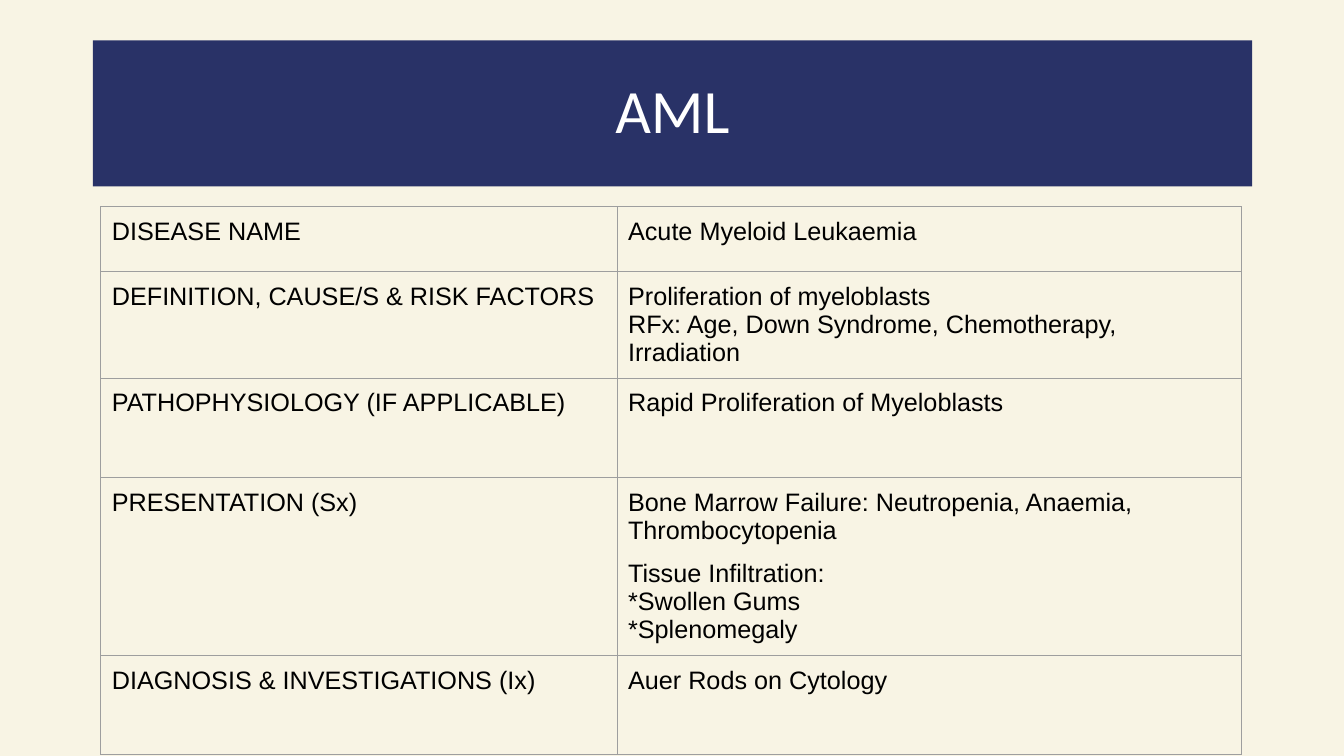
import pptx
import pptx.util
import pptx.dml.color
import pptx.enum.text
import pptx.oxml
import pptx.oxml.ns
from pptx.util import Inches

COLOURS = {"page": "F8F4E4", "banner": "293267", "heading": "FFFFFF",
           "body": "000000", "border": "9E9E9E"}

DISEASE_FACTS = [
    (0.64, "DISEASE NAME", ["Acute Myeloid Leukaemia"]),
    (0.99, "DEFINITION, CAUSE/S & RISK FACTORS",
     ["Proliferation of myeloblasts",
      "RFx: Age, Down Syndrome, Chemotherapy, Irradiation"]),
    (0.99, "PATHOPHYSIOLOGY (IF APPLICABLE)",
     ["Rapid Proliferation of Myeloblasts"]),
    (1.66, "PRESENTATION (Sx)",
     ["Bone Marrow Failure: Neutropenia, Anaemia, Thrombocytopenia",
      "Tissue Infiltration:", "*Swollen Gums", "*Splenomegaly"]),
    (0.99, "DIAGNOSIS & INVESTIGATIONS (Ix)", ["Auer Rods on Cytology"]),
]
LINE_SPACING = {"Tissue Infiltration:": 1.5}


class DiseaseSlide:
    heading_font = "Calibri"
    body_font = "Arial"
    cell_margin = Inches(0.11)

    def __init__(self, deck):
        self.slide = deck.slides.add_slide(deck.slide_layouts[5])
        self.paint(self.slide.background.fill, "page")

    def paint(self, fill, colour):
        fill.solid()
        fill.fore_color.rgb = pptx.dml.color.RGBColor.from_string(COLOURS[colour])

    def add_text(self, paragraph, text, font, size, colour):
        run = paragraph.add_run()
        run.text = text
        run.font.name = font
        run.font.size = pptx.util.Pt(size)
        run.font.color.rgb = pptx.dml.color.RGBColor.from_string(COLOURS[colour])

    def title(self, text, left, top, width, height):
        banner = self.slide.shapes.title
        banner.left, banner.top = Inches(left), Inches(top)
        banner.width, banner.height = Inches(width), Inches(height)
        self.paint(banner.fill, "banner")
        frame = banner.text_frame
        frame.word_wrap = True
        frame.auto_size = pptx.enum.text.MSO_AUTO_SIZE.NONE
        frame.vertical_anchor = pptx.enum.text.MSO_ANCHOR.MIDDLE
        heading = frame.paragraphs[0]
        heading.alignment = pptx.enum.text.PP_ALIGN.CENTER
        heading.line_spacing = 0.9
        self.add_text(heading, text, self.heading_font, 44, "heading")

    def borders(self, cell):
        properties = cell._tc.get_or_add_tcPr()
        for position, side in enumerate(("lnL", "lnR", "lnT", "lnB")):
            properties.insert(position, pptx.oxml.parse_xml(
                f'<a:{side} {pptx.oxml.ns.nsdecls("a")} w="{pptx.util.Pt(0.75)}">'
                f'<a:solidFill><a:srgbClr val="{COLOURS["border"]}"/></a:solidFill>'
                f'</a:{side}>'))

    def cell(self, cell, lines):
        cell.margin_left = cell.margin_right = self.cell_margin
        cell.margin_top = cell.margin_bottom = self.cell_margin
        cell.fill.background()
        self.borders(cell)
        frame = cell.text_frame
        for number, line in enumerate(lines):
            paragraph = frame.add_paragraph() if number else frame.paragraphs[0]
            paragraph.line_spacing = LINE_SPACING.get(line, 1.0)
            self.add_text(paragraph, line, self.body_font, 18, "body")

    def table(self, facts, left, top, column_widths):
        height = sum(row_height for row_height, _, _ in facts)
        grid = self.slide.shapes.add_table(
            len(facts), len(column_widths), Inches(left), Inches(top),
            Inches(sum(column_widths)), Inches(height)).table
        grid.first_row = grid.horz_banding = False
        for column, width in zip(grid.columns, column_widths):
            column.width = Inches(width)
        for row, (row_height, topic, details) in zip(grid.rows, facts):
            row.height = Inches(row_height)
            for cell, lines in zip(row.cells, ([topic], details)):
                self.cell(cell, lines)


def main():
    deck = pptx.Presentation()
    deck.slide_width, deck.slide_height = Inches(13.33), Inches(7.5)
    leukaemia = DiseaseSlide(deck)
    leukaemia.title("AML", 0.92, 0.4, 11.5, 1.45)
    leukaemia.table(DISEASE_FACTS, 1, 2.05, (5.12, 6.19))
    deck.save("out.pptx")


if __name__ == "__main__":
    main()
